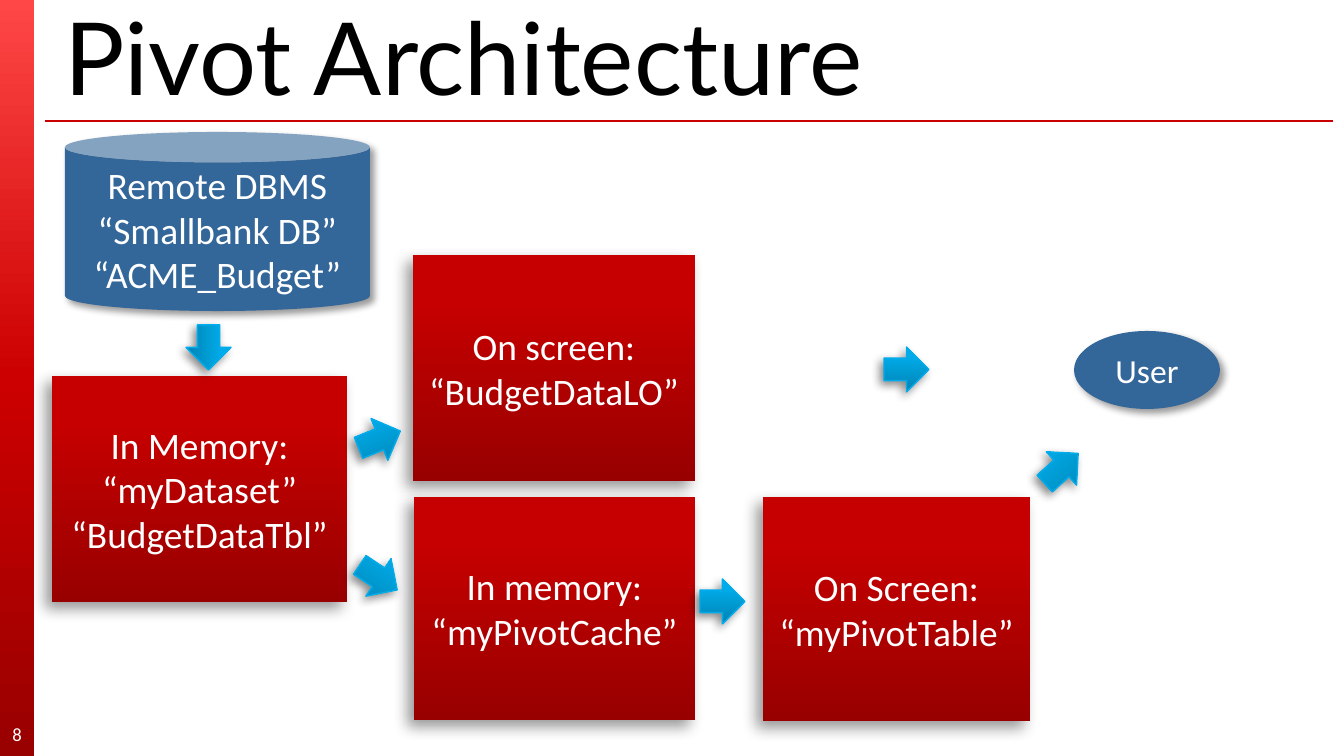
"""Build the Pivot Architecture slide."""
from lxml.etree import SubElement
from pptx import Presentation
from pptx.dml.color import RGBColor
from pptx.enum.shapes import MSO_CONNECTOR, MSO_SHAPE
from pptx.enum.text import MSO_ANCHOR, PP_ALIGN
from pptx.oxml.ns import qn
from pptx.util import Pt

PX = 914400 / 134.4
COLORS = {
    "black": "000000",
    "white": "FFFFFF",
    "blue": "336699",
    "rule": "C80000",
    "arrow_line": "00ACEB",
}
BAR_GRADIENT = [(0, "FF4747"), (50, "CC0000"), (100, "990000")]
BOX_GRADIENT = [(0, "980000"), (80, "C60000"), (100, "C70000")]
ARROW_GRADIENT = [(0, "0083B3"), (80, "00ABE9"), (100, "00ABEA")]


def write_text(shape, text, size=20, font="Calibri", color="white",
               align=PP_ALIGN.CENTER, margin=None):
    frame = shape.text_frame
    frame.word_wrap = True
    frame.vertical_anchor = MSO_ANCHOR.MIDDLE
    if margin is not None:
        frame.margin_left = frame.margin_right = margin
        frame.margin_top = frame.margin_bottom = margin
    frame.text = text
    for paragraph in frame.paragraphs:
        paragraph.alignment = align
        for run in paragraph.runs:
            run.font.size = Pt(size)
            run.font.name = font
            run.font.color.rgb = RGBColor.from_string(COLORS[color])


def add_styled_shape(kind, box, gradient=None, angle=90, line=None, shadow=None):
    shape = slide.shapes.add_shape(kind, *[round(value * PX) for value in box])
    if gradient:
        shape.fill.gradient()
        shape.fill.gradient_angle = angle
        stops = shape._element.spPr.find(qn("a:gradFill")).find(qn("a:gsLst"))
        stops.clear()
        for position, color in gradient:
            stop = SubElement(stops, qn("a:gs"), pos=str(position * 1000))
            SubElement(stop, qn("a:srgbClr"), val=color)
    else:
        shape.fill.solid()
        shape.fill.fore_color.rgb = RGBColor.from_string(COLORS["blue"])
    if line:
        shape.line.color.rgb = RGBColor.from_string(COLORS[line])
        shape.line.width = Pt(0.75)
    else:
        shape.line.fill.background()
    shape.shadow.inherit = False
    if shadow:
        opacity, blur, distance, direction = shadow
        effects = shape._element.spPr.find(qn("a:effectLst"))
        outer = SubElement(effects, qn("a:outerShdw"), blurRad=str(Pt(blur)),
                           dist=str(Pt(distance)), dir=str(direction * 60000),
                           algn="ctr", rotWithShape="0")
        color = SubElement(outer, qn("a:srgbClr"), val=COLORS["black"])
        SubElement(color, qn("a:alpha"), val=str(opacity * 1000))
    return shape


presentation = Presentation()
presentation.slide_width = round(1344 * PX)
presentation.slide_height = round(756 * PX)
slide = presentation.slides.add_slide(presentation.slide_layouts[6])

add_styled_shape(MSO_SHAPE.RECTANGLE, (0, 0, 34, 756), BAR_GRADIENT, angle=270)

rule = slide.shapes.add_connector(
    MSO_CONNECTOR.STRAIGHT, *[round(value * PX) for value in (45, 121, 1333, 121)])
rule.line.color.rgb = RGBColor.from_string(COLORS["rule"])
rule.line.width = Pt(0.75)
SubElement(rule._element.spPr, qn("a:effectLst"))

title = slide.shapes.add_textbox(*[round(value * PX) for value in (51, 20, 1288, 71)])
write_text(title, "Pivot Architecture", size=54, font="Lato", color="black",
           align=PP_ALIGN.LEFT)
number = slide.shapes.add_textbox(*[round(value * PX) for value in (0, 714, 34, 40)])
write_text(number, "8", size=10, margin=0)

BLUE_SHADOW = (40, 4, 3, 45)
user = add_styled_shape(MSO_SHAPE.OVAL, (1074, 331, 146, 78), shadow=BLUE_SHADOW)
write_text(user, "User", size=18)
database = add_styled_shape(MSO_SHAPE.CAN, (65, 132, 305, 179), shadow=BLUE_SHADOW)
database.adjustments[0] = 0.17
write_text(database, "Remote DBMS\n“Smallbank DB”\v“ACME_Budget”")

stages = [
    ((52, 376, 295, 226), "In Memory:\n“myDataset” “BudgetDataTbl”"),
    ((413, 255, 282, 226), "On screen:\n“BudgetDataLO”"),
    ((414, 497, 281, 223), "In memory:\n“myPivotCache”"),
    ((763, 497, 267, 224), "On Screen:\v“myPivotTable”"),
]
for box, text in stages:
    stage = add_styled_shape(MSO_SHAPE.RECTANGLE, box, BOX_GRADIENT,
                             shadow=(40, 8, 5, 135))
    write_text(stage, text)

arrows = [
    (357, 417, 338.1),
    (186, 325, 90),
    (356, 555, 33.8),
    (700, 579, 0),
    (1039, 446, 317.9),
    (884, 347, 0),
]
for left, top, rotation in arrows:
    arrow = add_styled_shape(MSO_SHAPE.RIGHT_ARROW, (left, top, 45, 45),
                             ARROW_GRADIENT, line="arrow_line",
                             shadow=(45, 5, 3, 135))
    arrow.rotation = rotation

presentation.save("out.pptx")
